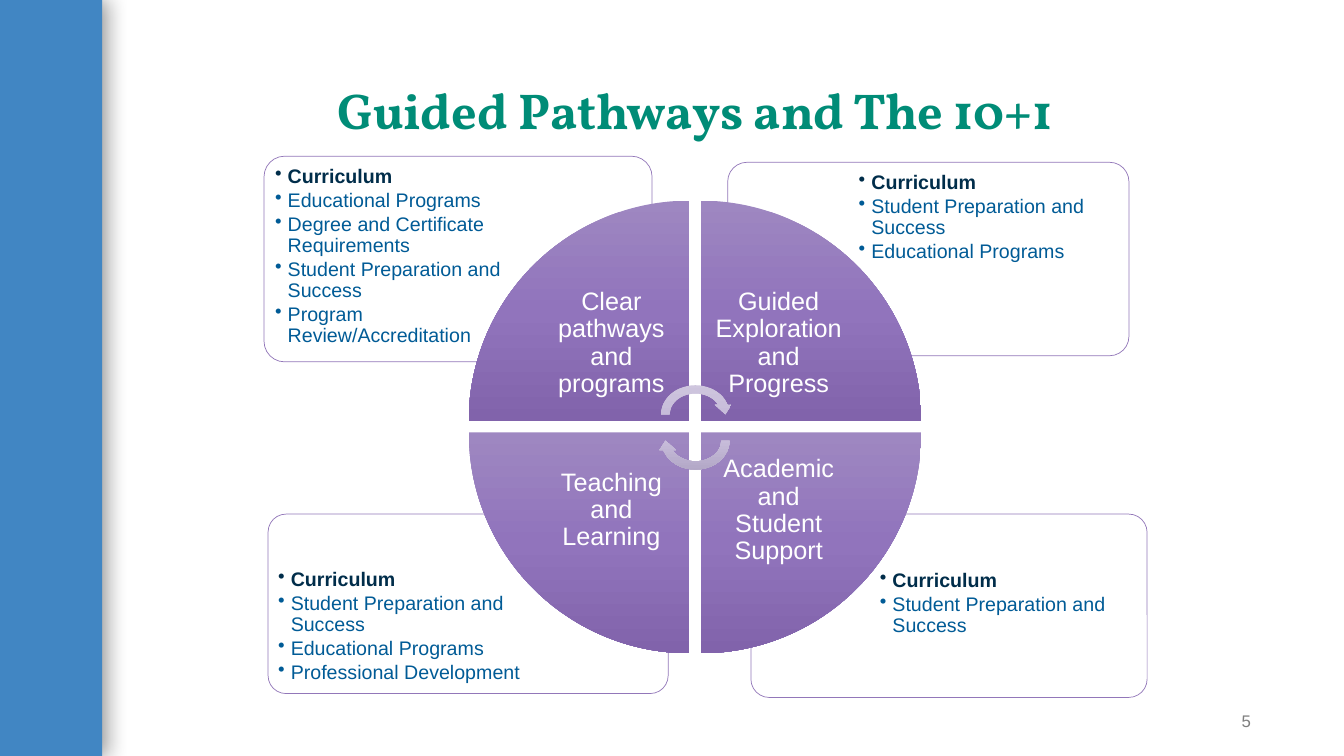
"""Build the Guided Pathways slide with four cards around a quartered circle."""
from dataclasses import dataclass

import lxml.etree
import pptx
import pptx.dml.color
import pptx.enum.shapes
import pptx.enum.text
import pptx.oxml
import pptx.oxml.ns
import pptx.presentation
import pptx.shapes.autoshape
import pptx.slide
import pptx.text.text
import pptx.util

COLOURS: dict[str, str] = {
    "bar": "4186C3",
    "shadow": "000000",
    "title": "008C77",
    "white": "FFFFFF",
    "border": "9277B9",
    "heading": "002D4A",
    "item": "005B96",
    "number": "7F7F7F",
}
WEDGE_STOPS = ("9E87C1", "9174BC", "8163AB")
ARROW_STOPS = ("CFC6DE", "C7BCDA", "B0A5C4")
WEDGE_SIZE, WEDGE_STEP, LABEL_SIZE = 157.7, 165.6, 111.6
CIRCLE_LEFT, CIRCLE_TOP = 334.8, 143.3

Pt = pptx.util.Pt
Shape = pptx.shapes.autoshape.Shape
Slide = pptx.slide.Slide
Kind = pptx.enum.shapes.MSO_SHAPE
Align = pptx.enum.text.PP_ALIGN
Anchor = pptx.enum.text.MSO_ANCHOR
qn = pptx.oxml.ns.qn


@dataclass(frozen=True)
class Area:
    """A rectangle on the page, in points."""
    left: float
    top: float
    width: float
    height: float

    def lengths(self) -> list[pptx.util.Length]:
        """Return left, top, width and height as lengths."""
        return [Pt(value) for value in (self.left, self.top, self.width, self.height)]


@dataclass(frozen=True)
class Card:
    """A rounded frame with its bulleted topics."""
    frame: Area
    body: Area
    items: tuple[str, ...]


@dataclass(frozen=True)
class Quarter:
    """A quarter of the circle, by column and row."""
    column: int
    row: int
    rotation: int
    label: str


PREPARATION = "Student Preparation and Success"
PROGRAMS = "Educational Programs"
CARDS = (
    Card(Area(536.4, 367.2, 283, 131), Area(624.2, 403.2, 192.2, 92.9), (PREPARATION,)),
    Card(Area(191.5, 367.2, 285.8, 128.2), Area(194.4, 402.5, 194.4, 90),
         (PREPARATION, PROGRAMS, "Professional Development")),
    Card(Area(519.8, 115.9, 286.6, 138.2), Area(609.1, 118.8, 194.4, 97.9),
         (PREPARATION, PROGRAMS)),
    Card(Area(188.6, 111.6, 277.2, 146.9), Area(192.2, 114.5, 187.9, 103.7),
         (PROGRAMS, "Degree and Certificate Requirements", PREPARATION,
          "Program Review/Accreditation")),
)
QUARTERS = (
    Quarter(0, 0, 0, "Clear pathways and programs"),
    Quarter(1, 0, 90, "Guided Exploration and Progress"),
    Quarter(1, 1, 180, "Academic and Student Support"),
    Quarter(0, 1, 270, "Teaching and Learning"),
)


def colour(name: str) -> pptx.dml.color.RGBColor:
    """Look up a named colour."""
    return pptx.dml.color.RGBColor.from_string(COLOURS[name])


def add_plain_shape(page: Slide, kind: Kind, area: Area) -> Shape:
    """Add a shape without line or shadow."""
    shape = page.shapes.add_shape(kind, *area.lengths())
    shape.shadow.inherit = False
    shape.line.fill.background()
    return shape


def add_box(page: Slide, area: Area, insets: tuple[float, ...]) -> pptx.text.text.TextFrame:
    """Add a wrapping text box and return its frame."""
    frame = page.shapes.add_textbox(*area.lengths()).text_frame
    frame.word_wrap = True
    (frame.margin_left, frame.margin_top,
     frame.margin_right, frame.margin_bottom) = [Pt(inset) for inset in insets]
    return frame


def add_span(para: pptx.text.text._Paragraph, text: str, size: float, shade: str,
             bold: bool = False, font: str = "Arial") -> None:
    """Add a formatted run to a paragraph."""
    span = para.add_run()
    span.text = text
    span.font.name, span.font.size, span.font.bold = font, Pt(size), bold
    span.font.color.rgb = colour(shade)


def fill_gradient(shape: Shape, stops: tuple[str, ...]) -> None:
    """Fill a shape from top to bottom, whatever its rotation."""
    shape.fill.background()
    marks = "".join(
        f'<a:gs pos="{index * 50000}"><a:srgbClr val="{stop}"/></a:gs>'
        for index, stop in enumerate(stops))
    gradient = pptx.oxml.parse_xml(
        f'<a:gradFill {pptx.oxml.ns.nsdecls("a")} rotWithShape="0">'
        f'<a:gsLst>{marks}</a:gsLst><a:lin ang="5400000" scaled="0"/></a:gradFill>')
    properties = shape._element.spPr
    properties.replace(properties.find(qn("a:noFill")), gradient)


def draw_bar(page: Slide) -> None:
    """Draw the side bar and its soft shadow."""
    bar = add_plain_shape(page, Kind.RECTANGLE, Area(0, 0, 73, 540))
    bar.fill.solid()
    bar.fill.fore_color.rgb = colour("bar")
    effects = bar._element.spPr.find(qn("a:effectLst"))
    shadow = lxml.etree.SubElement(
        effects, qn("a:outerShdw"), blurRad=str(Pt(15)), dist=str(Pt(3)), dir="0")
    tint = lxml.etree.SubElement(shadow, qn("a:srgbClr"), val=COLOURS["shadow"])
    lxml.etree.SubElement(tint, qn("a:alpha"), val="40000")


def draw_title(page: Slide) -> None:
    """Place and format the title."""
    title = page.shapes.title
    title.left, title.top, title.width, title.height = Area(100.8, 28.8, 791.3, 104.4).lengths()
    frame = title.text_frame
    frame.auto_size = pptx.enum.text.MSO_AUTO_SIZE.NONE
    frame.vertical_anchor = Anchor.MIDDLE
    para = frame.paragraphs[0]
    para.alignment, para.line_spacing = Align.CENTER, 0.9
    add_span(para, "Guided Pathways and The 10+1", 36, "title", True, "Vollkorn")


def draw_card(page: Slide, card: Card) -> None:
    """Draw a card frame and its bulleted list."""
    outline = add_plain_shape(page, Kind.ROUNDED_RECTANGLE, card.frame)
    outline.adjustments[0] = 0.1
    outline.fill.solid()
    outline.fill.fore_color.rgb = colour("white")
    tint = outline._element.spPr.find(qn("a:solidFill"))[0]
    lxml.etree.SubElement(tint, qn("a:alpha"), val="90000")
    outline.line.color.rgb = colour("border")
    outline.line.width = Pt(0.5)
    frame = add_box(page, card.body, (4.3,) * 4)
    for index, text in enumerate(("Curriculum",) + card.items):
        para = frame.add_paragraph() if index else frame.paragraphs[0]
        properties = para._p.get_or_add_pPr()
        properties.set("marL", str(Pt(9)))
        properties.set("indent", str(Pt(-9)))
        lxml.etree.SubElement(properties, qn("a:buChar"), char="•")
        para.level, para.line_spacing, para.space_after = 1, 0.9, Pt(2)
        add_span(para, text, 14, "item" if index else "heading", not index)


def draw_quarter(page: Slide, quarter: Quarter) -> None:
    """Draw a wedge and its label beside the centre."""
    left = CIRCLE_LEFT + quarter.column * WEDGE_STEP
    top = CIRCLE_TOP + quarter.row * WEDGE_STEP
    wedge = add_plain_shape(page, Kind.PIE_WEDGE, Area(left, top, WEDGE_SIZE, WEDGE_SIZE))
    wedge.rotation = quarter.rotation
    fill_gradient(wedge, WEDGE_STOPS)
    shift = WEDGE_SIZE - LABEL_SIZE
    area = Area(left + shift * (1 - quarter.column), top + shift * (1 - quarter.row),
                LABEL_SIZE, LABEL_SIZE)
    frame = add_box(page, area, (10,) * 4)
    frame.vertical_anchor = Anchor.MIDDLE
    para = frame.paragraphs[0]
    para.alignment, para.line_spacing = Align.CENTER, 0.9
    add_span(para, quarter.label, 18, "white")


def main() -> None:
    """Build and save the deck."""
    deck = pptx.Presentation()
    deck.slide_width, deck.slide_height = Pt(960), Pt(540)
    page = deck.slides.add_slide(deck.slide_layouts[5])
    draw_bar(page)
    draw_title(page)
    for card in CARDS:
        draw_card(page, card)
    for quarter in QUARTERS:
        draw_quarter(page, quarter)
    for top, rotation in ((272.2, 0), (290.9, 180)):
        arrow = add_plain_shape(page, Kind.CIRCULAR_ARROW, Area(469.4, top, 54.7, 47.5))
        arrow.rotation = rotation
        fill_gradient(arrow, ARROW_STOPS)
    frame = add_box(page, Area(821.5, 500.4, 72, 28.8), (7.2, 3.6, 0, 3.6))
    frame.vertical_anchor = Anchor.MIDDLE
    frame.paragraphs[0].alignment = Align.RIGHT
    add_span(frame.paragraphs[0], "5", 12, "number")
    deck.save("out.pptx")


if __name__ == "__main__":
    main()
